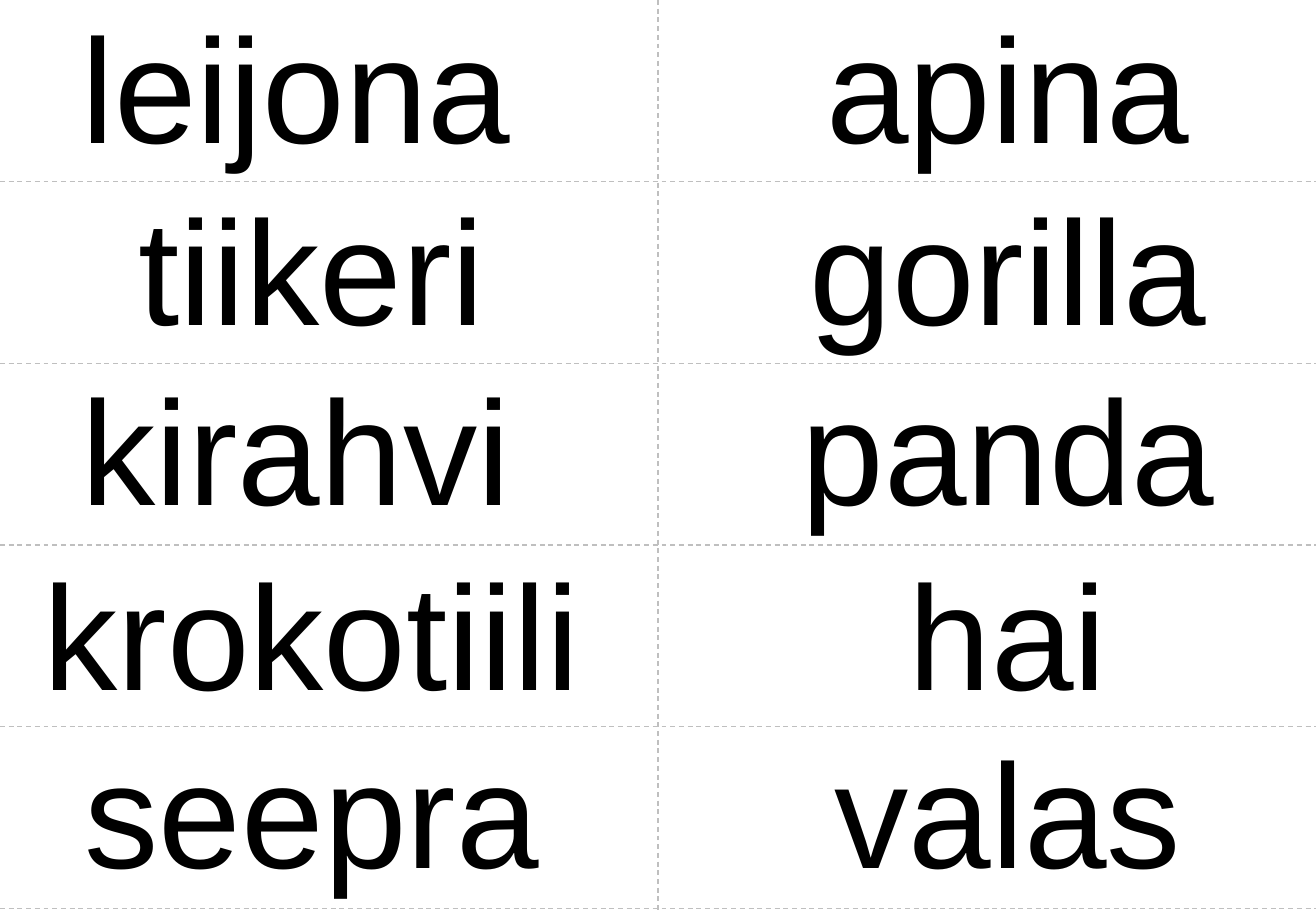
from pptx import Presentation
from pptx.dml.color import RGBColor
from pptx.enum.dml import MSO_LINE
from pptx.enum.shapes import MSO_CONNECTOR
from pptx.enum.text import MSO_AUTO_SIZE, PP_ALIGN
from pptx.oxml.ns import qn
from pptx.util import Pt
from lxml import etree

BLACK = RGBColor(0x00, 0x00, 0x00)
GREY = RGBColor(0xBF, 0xBF, 0xBF)
DASH = MSO_LINE.DASH
STRAIGHT = MSO_CONNECTOR.STRAIGHT
CENTER = PP_ALIGN.CENTER
FIT_SHAPE = MSO_AUTO_SIZE.SHAPE_TO_FIT_TEXT

SLIDE_WIDTH, SLIDE_HEIGHT = 780, 540
ROW_HEIGHT = 107.7
WORD_HEIGHT = 106.6
RIGHT_CENTER = 597.4
WORD_FONT = {"name": "Arial", "size": Pt(88)}
FRAME_FORMAT = {
    "word_wrap": False,
    "auto_size": FIT_SHAPE,
    "margin_left": Pt(3.6),
    "margin_right": Pt(3.6),
    "margin_top": Pt(3.6),
    "margin_bottom": Pt(3.6),
}

# Each row: top, then (word, centre, width) for the left and right card
ROWS = [
    (-6.5, ("leijona", 175.3, 262.8), ("apina", RIGHT_CENTER, 223.2)),
    (101.5, ("tiikeri", 184.7, 213.8), ("gorilla", RIGHT_CENTER, 242.6)),
    (208.1, ("kirahvi", 175.3, 262.8), ("panda", RIGHT_CENTER, 252.7)),
    (317.5, ("krokotiili", 184.7, 326.2), ("hai", RIGHT_CENTER, 125.3)),
    (423.4, ("seepra", 184.7, 277.2), ("valas", RIGHT_CENTER, 213.8)),
]

presentation = Presentation()
presentation.slide_width = Pt(SLIDE_WIDTH)
presentation.slide_height = Pt(SLIDE_HEIGHT)
slide = presentation.slides.add_slide(presentation.slide_layouts[6])

# Animal words
for top, *cards in ROWS:
    for word, center, width in cards:
        shape = slide.shapes.add_textbox(
            Pt(center - width / 2), Pt(top), Pt(width), Pt(WORD_HEIGHT))
        for attribute, value in FRAME_FORMAT.items():
            setattr(shape.text_frame, attribute, value)
        paragraph = shape.text_frame.paragraphs[0]
        paragraph.alignment = CENTER
        run = paragraph.add_run()
        run.text = word
        for attribute, value in WORD_FONT.items():
            setattr(run.font, attribute, value)
        run.font.color.rgb = BLACK

# Cutting lines: one down the middle, one below each row
cuts = [(SLIDE_WIDTH / 2, 0, SLIDE_WIDTH / 2, SLIDE_HEIGHT)]
for row in range(1, len(ROWS) + 1):
    cuts.append((0, row * ROW_HEIGHT, SLIDE_WIDTH, row * ROW_HEIGHT))

for cut in cuts:
    connector = slide.shapes.add_connector(STRAIGHT, *[Pt(length) for length in cut])
    connector.line.color.rgb = GREY
    connector.line.width = Pt(0.75)
    connector.line.dash_style = DASH
    etree.SubElement(connector._element.spPr, qn("a:effectLst"))

presentation.save("out.pptx")
